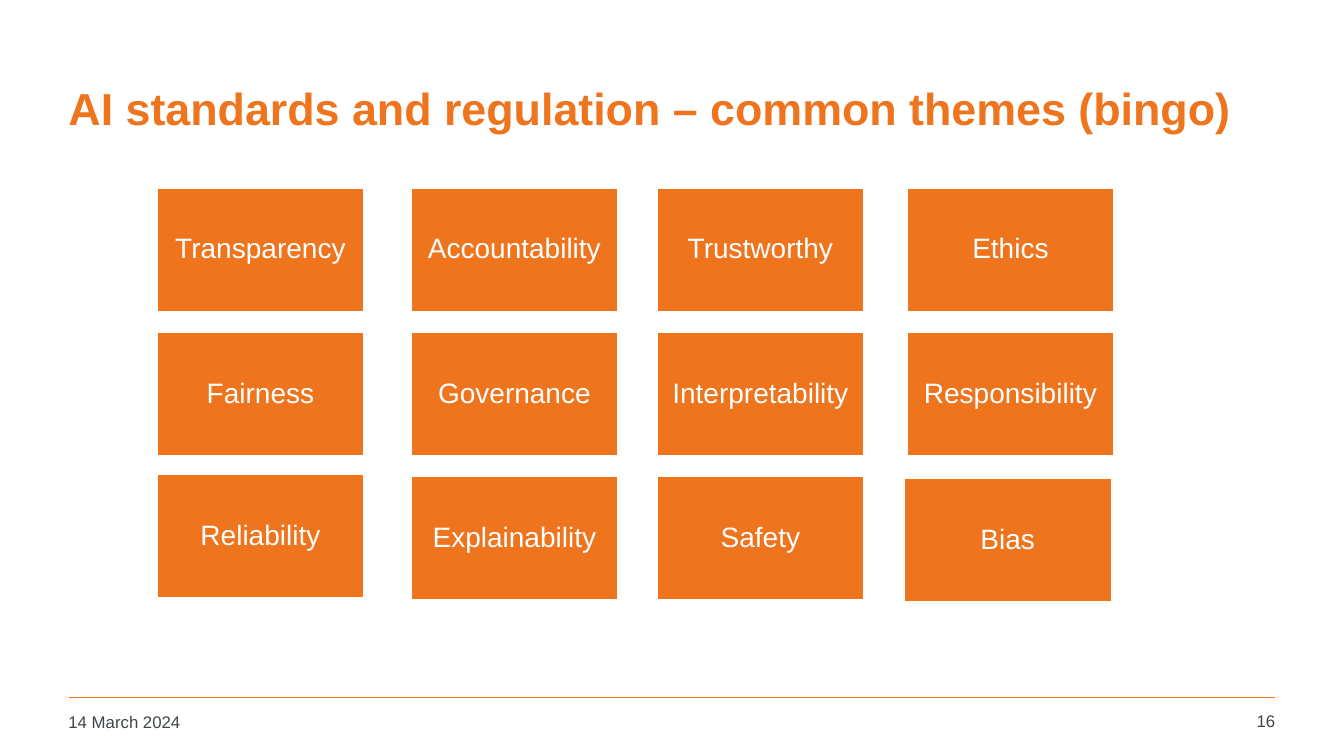
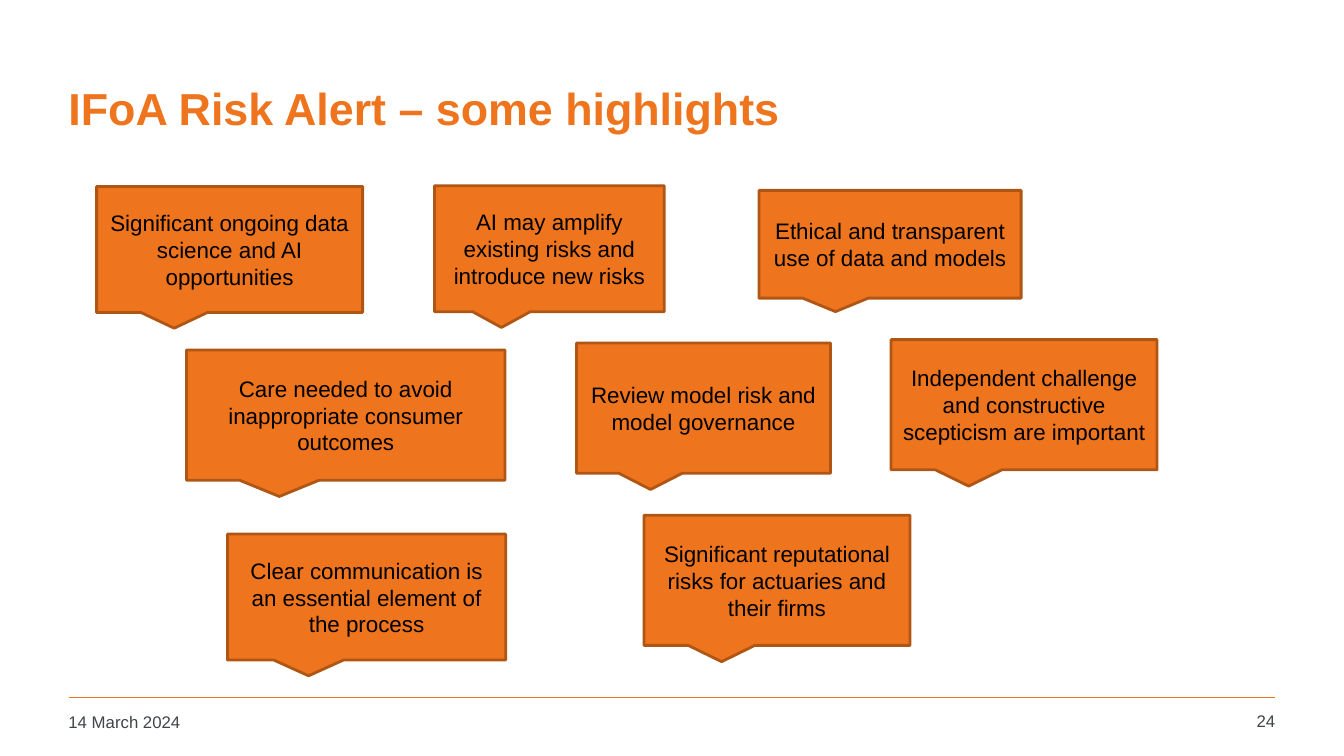
"""Build two slides on AI standards, regulation and risk."""
from lxml.etree import SubElement
from pptx import Presentation
from pptx.dml.color import RGBColor
from pptx.enum.shapes import MSO_CONNECTOR, MSO_SHAPE as Preset
from pptx.enum.text import MSO_ANCHOR as Anchor, PP_ALIGN as Align
from pptx.oxml.ns import qn
from pptx.util import Pt

FONT = "Arial"
COLORS = {
    "orange": "EE741D",
    "rust": "B05615",
    "slate": "3F4548",
    "white": "FFFFFF",
    "black": "000000",
}
HEX = {name: RGBColor.from_string(value) for name, value in COLORS.items()}


def write(shape, text, size, color, align=Align.LEFT, anchor=Anchor.TOP, bold=False):
    frame = shape.text_frame
    frame.word_wrap = True
    frame.vertical_anchor = anchor
    para = frame.paragraphs[0]
    para.text = text
    para.alignment = align
    para.font.name = FONT
    para.font.size = Pt(size)
    para.font.bold = bold
    para.font.color.rgb = HEX[color]
    return para


def add_panel(page, preset, bounds, text, size, text_color, line_color):
    panel = page.shapes.add_shape(preset, *map(Pt, bounds))
    panel.shadow.inherit = False
    panel.fill.solid()
    panel.fill.fore_color.rgb = HEX["orange"]
    panel.line.color.rgb = HEX[line_color]
    panel.line.width = Pt(2)
    para = write(panel, text, size, text_color, Align.CENTER, Anchor.MIDDLE)
    return panel.text_frame, para


deck = Presentation()
deck.slide_width = Pt(960)
deck.slide_height = Pt(540)

pages = []
for title, number in [
    ("AI standards and regulation – common themes (bingo)", "16"),
    ("IFoA Risk Alert – some highlights", "24"),
]:
    page = deck.slides.add_slide(deck.slide_layouts[6])
    pages.append(page)
    rule = page.shapes.add_connector(
        MSO_CONNECTOR.STRAIGHT, Pt(49), Pt(498.2), Pt(910.8), Pt(498.2)
    )
    rule.line.color.rgb = HEX["orange"]
    rule.line.width = Pt(1)
    SubElement(rule._element.spPr, qn("a:effectLst"))
    heading = page.shapes.add_textbox(Pt(41.8), Pt(31.7), Pt(870.5), Pt(90))
    write(heading, title, 32, "orange", anchor=Anchor.MIDDLE, bold=True)
    date = page.shapes.add_textbox(Pt(41.8), Pt(504.7), Pt(211.7), Pt(26))
    write(date, "14 March 2024", 12, "slate")
    folio = page.shapes.add_textbox(Pt(850.3), Pt(504), Pt(67.7), Pt(26.6))
    write(folio, number, 12, "slate", Align.RIGHT)

themes_page, highlights_page = pages

column_lefts = [111.6, 293, 468.7, 647.3]
first_top, row_pitch = 134, 103
themes = [
    ["Transparency", "Accountability", "Trustworthy", "Ethics"],
    ["Fairness", "Governance", "Interpretability", "Responsibility"],
    ["Reliability", "Explainability", "Safety", "Bias"],
]
nudges = {"Reliability": (0, -1.5), "Bias": (-2, 1.5)}
for row, names in enumerate(themes):
    for left, name in zip(column_lefts, names):
        shift_x, shift_y = nudges.get(name, (0, 0))
        bounds = (left + shift_x, first_top + row * row_pitch + shift_y, 149, 89)
        frame, para = add_panel(
            themes_page, Preset.RECTANGLE, bounds, name, 20, "white", "white"
        )
        frame.margin_left = frame.margin_right = Pt(6)
        frame.margin_top = frame.margin_bottom = Pt(6)
        para.line_spacing = 0.9

highlights = [
    ("Significant ongoing data science and AI opportunities", 69, 133.2, 190, 90),
    ("AI may amplify existing risks and introduce new risks", 310.3, 132.7, 164.2, 90),
    ("Ethical and transparent use of data and models", 542.2, 136, 187.2, 77),
    ("Care needed to avoid inappropriate consumer outcomes", 133.2, 250, 227.5, 93),
    ("Review model risk and model governance", 411.8, 245, 181.4, 93),
    ("Independent challenge and constructive scepticism are important", 636.5, 242.6, 190, 93),
    ("Clear communication is an essential element of the process", 162.5, 381.5, 198.7, 90),
    ("Significant reputational risks for actuaries and their firms", 460, 368, 190, 93),
]
for text, *bounds in highlights:
    add_panel(
        highlights_page, Preset.RECTANGULAR_CALLOUT, bounds, text, 16, "black", "rust"
    )

deck.save("out.pptx")
